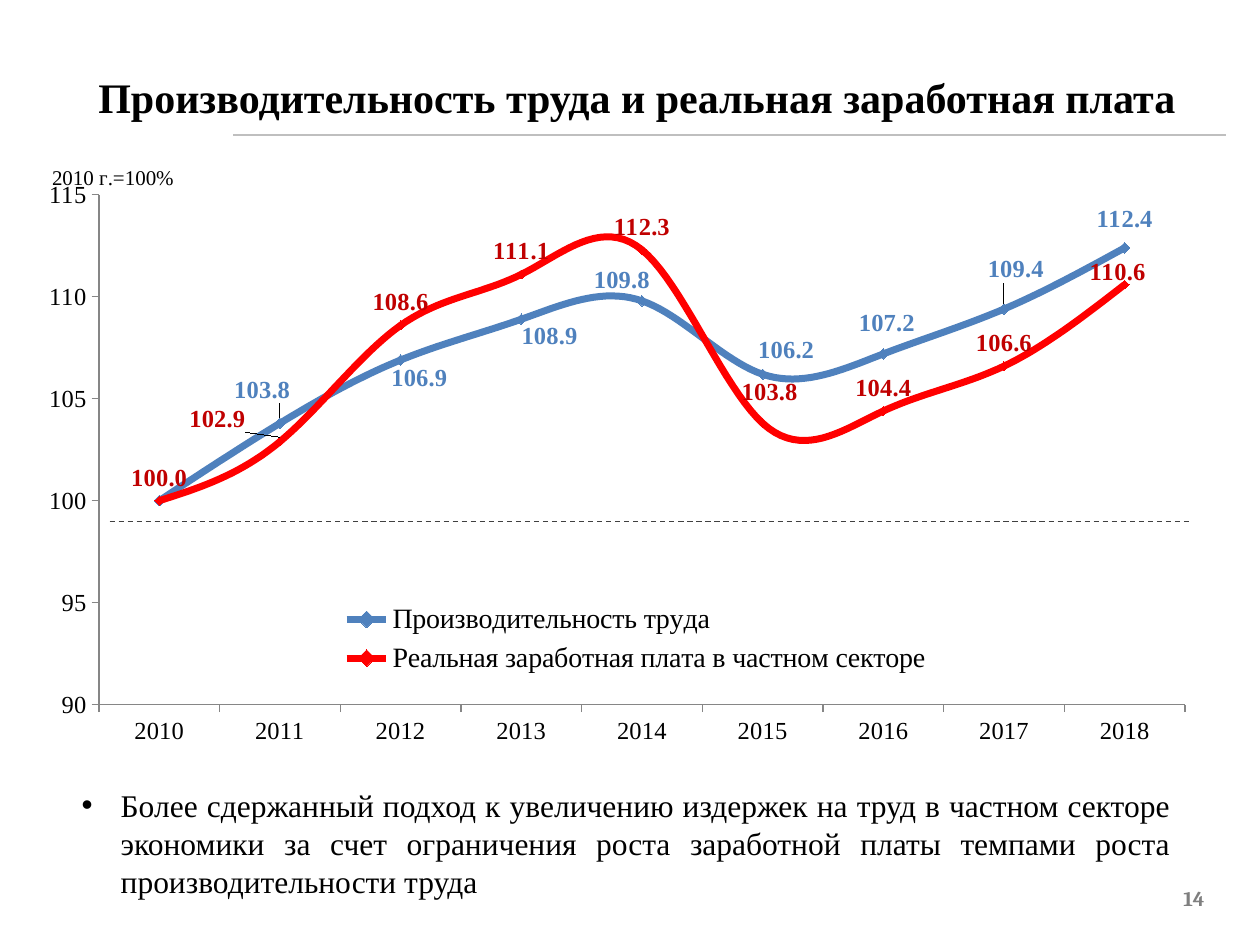
import pptx
import pptx.chart.data
import pptx.dml.color
import pptx.enum.chart
import pptx.enum.dml
import pptx.enum.shapes
import pptx.enum.text
import pptx.oxml
import pptx.oxml.ns
import pptx.util
from dataclasses import dataclass
from lxml import etree

Inches, Pt = pptx.util.Inches, pptx.util.Pt
RGB = pptx.dml.color.RGBColor.from_string
qn = pptx.oxml.ns.qn
XL = pptx.enum.chart
PP_ALIGN = pptx.enum.text.PP_ALIGN
ANCHOR = pptx.enum.text.MSO_ANCHOR


@dataclass(frozen=True)
class Theme:
    font: str = "Times New Roman"
    number_font: str = "Cambria"
    text: str = "000000"
    productivity: str = "4F81BD"
    wage: str = "FF0000"
    wage_label: str = "C00000"
    rule: str = "BFBFBF"
    baseline: str = "404040"
    axis: str = "868686"
    grid: str = "FFFFFF"
    muted: str = "7F7F7F"
    title_size: int = 24
    body_size: int = 18
    legend_size: int = 16
    chart_size: int = 14
    small_size: int = 12


THEME = Theme()
YEARS = [str(year) for year in range(2010, 2019)]
PRODUCTIVITY = [100, 103.8, 106.9, 108.9, 109.8, 106.2, 107.2, 109.4, 112.4]
WAGE = [100, 102.9, 108.6, 111.1, 112.3, 103.8, 104.4, 106.6, 110.6]
# Label shifts from above the point, as fractions of the chart; None hides the label.
PRODUCTIVITY_SHIFTS = {0: None, 1: (-0.015, -0.015), 2: (0.016, 0.07), 3: (0.024, 0.068),
                       4: (-0.017, 0.005), 5: (0.02, 0), 6: (0.003, -0.012),
                       7: (0.01, -0.026), 8: (0, -0.008)}
WAGE_SHIFTS = {1: (-0.053, 0), 5: (0.006, -0.013), 8: (-0.006, 0.017)}


def set_font(font, size, color=THEME.text, bold=False, name=THEME.font):
    font.name, font.size, font.bold = name, Pt(size), bold
    font.color.rgb = RGB(color)


def set_line(line, color, width):
    line.color.rgb = RGB(color)
    line.width = Pt(width)


def write(tf, text, size, align=PP_ALIGN.LEFT, anchor=ANCHOR.TOP, wrap=True,
          margin=None, bullet_indent=None, **font):
    tf.word_wrap, tf.vertical_anchor = wrap, anchor
    if margin is not None:
        tf.margin_left = tf.margin_right = tf.margin_top = tf.margin_bottom = margin
    p = tf.paragraphs[0]
    p.alignment = align
    if bullet_indent:
        pPr = p._p.get_or_add_pPr()
        pPr.set("marL", str(bullet_indent))
        pPr.set("indent", str(-bullet_indent))
        etree.SubElement(pPr, qn("a:buFont")).set("typeface", "Arial")
        etree.SubElement(pPr, qn("a:buChar")).set("char", "•")
    r = p.add_run()
    r.text = text
    set_font(r.font, size, **font)


def add_line(slide, x1, x2, y, color, width, dash=None):
    line = slide.shapes.add_connector(pptx.enum.shapes.MSO_CONNECTOR.STRAIGHT,
                                      x1, y, x2, y)
    set_line(line.line, color, width)
    if dash:
        line.line.dash_style = dash
    etree.SubElement(line._element.spPr, qn("a:effectLst"))


def set_layout(parent, index, **values):
    """Give a chart part a manual layout as its child number index."""
    for old in parent.findall(qn("c:layout")):
        parent.remove(old)
    layout = etree.Element(qn("c:layout"))
    manual = etree.SubElement(layout, qn("c:manualLayout"))
    for tag, value in values.items():
        etree.SubElement(manual, qn("c:" + tag)).set("val", str(value))
    parent.insert(index, layout)


def place_label(series, idx, shift, color):
    label = series.points[idx].data_label
    set_font(label.font, THEME.chart_size, color, bold=True)
    label.position = XL.XL_LABEL_POSITION.ABOVE
    dLbl = series._element.xpath(f'c:dLbls/c:dLbl[c:idx/@val="{idx}"]')[0]
    if shift is None:
        for child in list(dLbl)[1:]:
            dLbl.remove(child)
        etree.SubElement(dLbl, qn("c:delete")).set("val", "1")
        return
    set_layout(dLbl, 1, x=shift[0], y=shift[1])
    fmt = etree.Element(qn("c:numFmt"), formatCode="0.0", sourceLinked="0")
    dLbl.insert(2, fmt)


def style_series(series, color, label_color, marker_size, shifts):
    series.smooth = True
    set_line(series.format.line, color, 4)
    marker = series.marker
    marker.style, marker.size = XL.XL_MARKER_STYLE.DIAMOND, marker_size
    marker.format.fill.solid()
    marker.format.fill.fore_color.rgb = RGB(color)
    marker.format.line.color.rgb = RGB(color)
    labels = series.data_labels
    labels.show_value = True
    labels.number_format, labels.number_format_is_linked = "0.0", False
    labels.position = XL.XL_LABEL_POSITION.ABOVE
    set_font(labels.font, THEME.chart_size, label_color, bold=True)
    for idx, shift in shifts.items():
        place_label(series, idx, shift, label_color)


def style_axes(chart):
    for axis in (chart.category_axis, chart.value_axis):
        axis.major_tick_mark = XL.XL_TICK_MARK.OUTSIDE
        axis.minor_tick_mark = XL.XL_TICK_MARK.NONE
        set_line(axis.format.line, THEME.axis, 0.75)
        set_font(axis.tick_labels.font, THEME.chart_size)
    axis = chart.value_axis
    axis.minimum_scale, axis.maximum_scale, axis.major_unit = 90, 115, 5
    axis.tick_labels.number_format = "0"
    axis.tick_labels.number_format_is_linked = False
    set_line(axis.major_gridlines.format.line, THEME.grid, 0.25)
    tf = axis.axis_title.text_frame
    write(tf, "2010 г.=100%", THEME.small_size)
    tf._txBody.bodyPr.set("rot", "0")
    tf._txBody.bodyPr.set("vert", "horz")
    set_layout(axis.axis_title._element, 1, xMode="edge", yMode="edge", x=0.012, y=0.01)


def add_index_chart(slide, x, y, w, h):
    data = pptx.chart.data.CategoryChartData(number_format="0.0")
    data.categories = YEARS
    data.add_series("Производительность труда", PRODUCTIVITY)
    data.add_series("Реальная заработная плата в частном секторе", WAGE)
    chart = slide.shapes.add_chart(XL.XL_CHART_TYPE.LINE_MARKERS, x, y, w, h, data).chart
    chart.has_title = False
    set_font(chart.font, THEME.chart_size)
    plot = chart.plots[0]
    plot.vary_by_categories = False
    productivity, wage = plot.series
    style_series(productivity, THEME.productivity, THEME.productivity, 6, PRODUCTIVITY_SHIFTS)
    style_series(wage, THEME.wage, THEME.wage_label, 5, WAGE_SHIFTS)
    style_axes(chart)
    chart.has_legend = True
    legend = chart.legend
    legend.position = XL.XL_LEGEND_POSITION.RIGHT
    legend.include_in_layout = False
    set_font(legend.font, THEME.legend_size)
    set_layout(legend._element, 1, xMode="edge", yMode="edge", x=0.25, y=0.73, w=0.52, h=0.14)
    set_layout(chart._chartSpace.chart.plotArea, 0, layoutTarget="inner", xMode="edge",
               yMode="edge", x=0.055, y=0.066, w=0.92, h=0.843)


def add_title(slide, x, y, w, h):
    sp = slide.shapes.title
    sp.left, sp.top, sp.width, sp.height = x, y, w, h
    write(sp.text_frame, "Производительность труда и реальная заработная плата",
          THEME.title_size, bold=True)
    add_line(slide, Inches(1.85), Inches(9.73), y + Inches(0.55), THEME.rule, 1)


def add_conclusion(slide, x, y, w, h):
    write(slide.shapes.add_textbox(x, y, w, h).text_frame,
          "Более сдержанный подход к увеличению издержек на труд в частном секторе "
          "экономики за счет ограничения роста заработной платы темпами роста "
          "производительности труда",
          THEME.body_size, align=PP_ALIGN.JUSTIFY, bullet_indent=Inches(0.31))


def add_page_number(slide, x, y, w, h):
    write(slide.shapes.add_textbox(x, y, w, h).text_frame, "14", THEME.small_size,
          align=PP_ALIGN.RIGHT, anchor=ANCHOR.MIDDLE, wrap=False, margin=0,
          color=THEME.muted, bold=True, name=THEME.number_font)


def main():
    prs = pptx.Presentation()
    prs.slide_width, prs.slide_height = Inches(10), Inches(7.5)
    slide = prs.slides.add_slide(prs.slide_layouts[5])
    add_title(slide, Inches(0.68), Inches(0.52), Inches(8.98), Inches(0.5))
    add_index_chart(slide, Inches(0.27), Inches(1.23), Inches(9.37), Inches(4.8))
    add_line(slide, Inches(0.87), Inches(9.46), Inches(4.14), THEME.baseline, 0.75,
             pptx.enum.dml.MSO_LINE.DASH)
    add_conclusion(slide, Inches(0.55), Inches(6.19), Inches(8.84), Inches(1.01))
    add_page_number(slide, Inches(9.08), Inches(7.06), Inches(0.48), Inches(0.14))
    prs.save("out.pptx")


if __name__ == "__main__":
    main()
